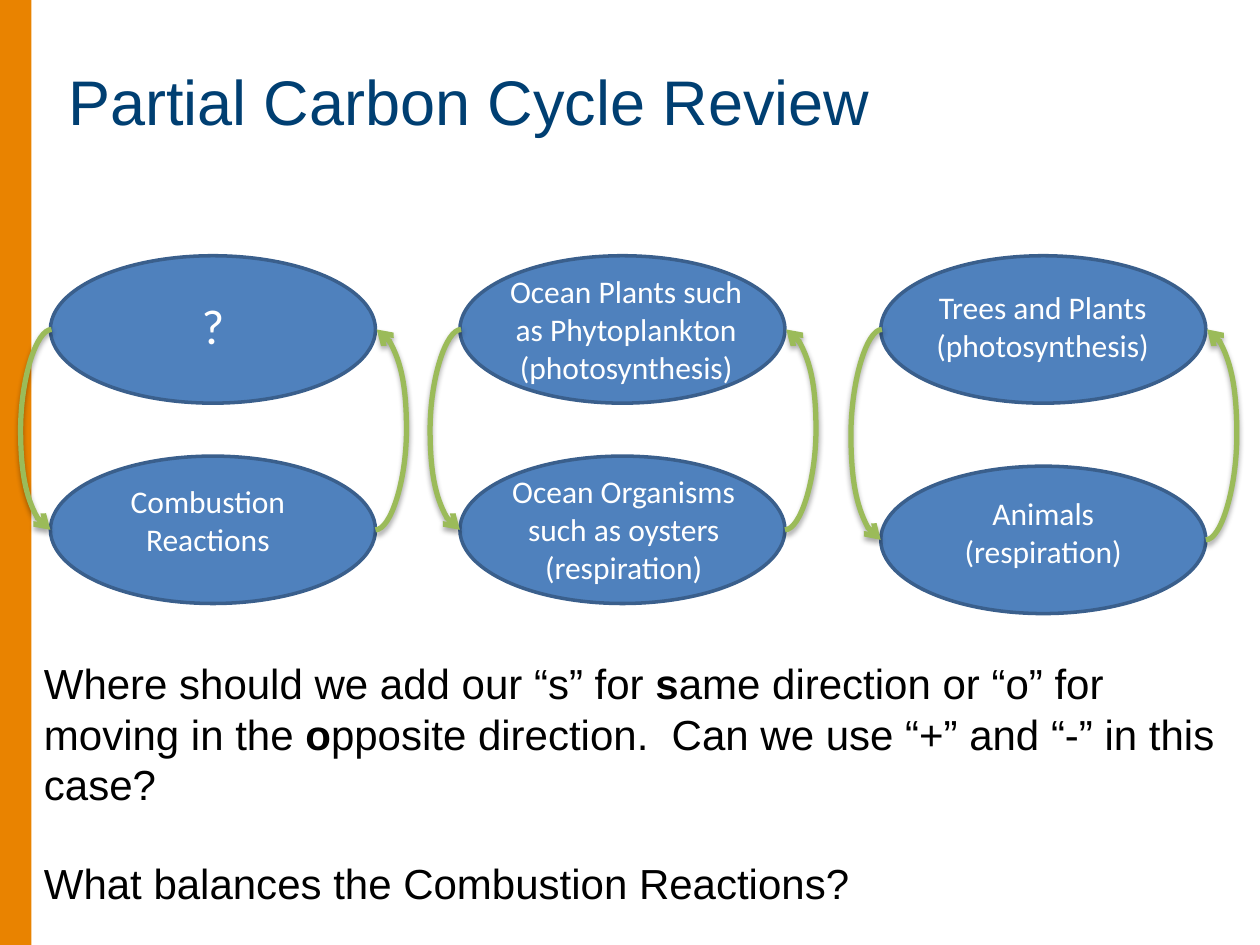
from lxml import etree
from pptx import Presentation
from pptx import util as u
from pptx.dml.color import RGBColor
from pptx.enum import shapes, text
from pptx.oxml import ns

ORANGE = RGBColor(0xE9, 0x83, 0x00)
NAVY = RGBColor(0x00, 0x3F, 0x72)
BLUE = RGBColor(0x4F, 0x81, 0xBD)
BLUE_EDGE = RGBColor(0x3A, 0x5F, 0x8C)
GREEN = RGBColor(0x9B, 0xBB, 0x59)
WHITE = RGBColor(0xFF, 0xFF, 0xFF)
BLACK = RGBColor(0x00, 0x00, 0x00)

OVAL_W, OVAL_H = 2.58, 1.17
TOP_Y = 2.03
BULGE, SHIFT = 0.25, 0.01

CYCLES = [
    (6.99, 3.70,
     (["Trees and Plants (photosynthesis)"], 7.22, 2.24, 2.11, 0.71, 18),
     (["Animals (respiration)"], 7.28, 3.87, 2, 0.71, 18)),
    (3.65, 3.62,
     (["Ocean Plants such as Phytoplankton", "(photosynthesis)"],
      3.85, 2.11, 2.24, 1.01, 18),
     (["Ocean Organisms such as oysters (respiration)"],
      3.81, 3.70, 2.28, 1.01, 18)),
    (0.40, 3.62,
     (["?"], 0.69, 2.30, 2, 0.57, 28),
     (["Combustion Reactions"], 0.65, 3.78, 2, 0.71, 18)),
]

QUESTIONS = [
    [("Where should we add our “s” for ", False), ("s", True),
     ("ame direction or “o” for moving in the ", False), ("o", True),
     ("pposite direction.  Can we use “+” and “-” in this case?", False)],
    [("What balances the Combustion Reactions?", False)],
]


class CycleSlide:
    def __init__(self, prs):
        self.s = prs.slides.add_slide(prs.slide_layouts[5])

    def style(self, font, color, **values):
        font.color.rgb = color
        for name, value in values.items():
            setattr(font, name, value)

    def place(self, sp, x, y, w, h):
        box = {"left": x, "top": y, "width": w, "height": h}
        for name, value in box.items():
            setattr(sp, name, u.Inches(value))

    def title(self, words, x, y, w, h):
        sp = self.s.shapes.title
        self.place(sp, x, y, w, h)
        tf = sp.text_frame
        tf.text = words
        tf.vertical_anchor = text.MSO_ANCHOR.MIDDLE
        p = tf.paragraphs[0]
        p.alignment = text.PP_ALIGN.LEFT
        self.style(p.runs[0].font, NAVY, name="Arial", size=u.Pt(36))

    def shape(self, parent, kind, x, y, w, h, fill, edge=None):
        sp = parent.shapes.add_shape(kind, *map(u.Inches, (x, y, w, h)))
        sp.shadow.inherit = False
        sp.fill.solid()
        sp.fill.fore_color.rgb = fill
        if edge is None:
            sp.line.fill.background()
        else:
            sp.line.color.rgb = edge
            sp.line.width = u.Pt(2)

    def textbox(self, parent, paragraphs, x, y, w, h, align, gap, color, **font):
        sp = parent.shapes.add_textbox(*map(u.Inches, (x, y, w, h)))
        tf = sp.text_frame
        tf.word_wrap = True
        for i, runs in enumerate(paragraphs):
            p = tf.add_paragraph() if i else tf.paragraphs[0]
            p.alignment = align
            if i:
                p.space_before = u.Pt(gap)
            for words, bold in runs:
                r = p.add_run()
                r.text = words
                self.style(r.font, color, bold=bold, **font)

    def label(self, parent, lines, x, y, w, h, size):
        self.textbox(parent, [[(line, False)] for line in lines], x, y, w, h,
                     text.PP_ALIGN.CENTER, 0, WHITE,
                     name="Calibri", size=u.Pt(size))

    def arrow(self, parent, x1, y1, x2, y2):
        c = parent.shapes.add_connector(
            shapes.MSO_CONNECTOR.CURVE, *map(u.Inches, (x1, y1, x2, y2)))
        c.line.color.rgb = GREEN
        c.line.width = u.Pt(3)
        spPr = c._element.spPr
        guides = spPr.find(ns.qn("a:prstGeom")).find(ns.qn("a:avLst"))
        ratio = round(BULGE / SHIFT * 100000)
        etree.SubElement(guides, ns.qn("a:gd"), name="adj1", fmla=f"val {ratio}")
        etree.SubElement(spPr.find(ns.qn("a:ln")), ns.qn("a:tailEnd"), type="arrow")
        effects = etree.SubElement(spPr, ns.qn("a:effectLst"))
        shadow = etree.SubElement(effects, ns.qn("a:outerShdw"), blurRad="40000",
                                  dist="23000", dir="5400000", rotWithShape="0")
        tint = etree.SubElement(shadow, ns.qn("a:srgbClr"), val=str(BLACK))
        etree.SubElement(tint, ns.qn("a:alpha"), val="35000")

    def cycle(self, x, low_y, top_label, low_label):
        group = self.s.shapes.add_group_shape()
        for y, label in ((TOP_Y, top_label), (low_y, low_label)):
            self.shape(group, shapes.MSO_SHAPE.OVAL, x, y, OVAL_W, OVAL_H,
                       BLUE, BLUE_EDGE)
            self.label(group, *label)
        top, low = TOP_Y + OVAL_H / 2, low_y + OVAL_H / 2
        right = x + OVAL_W
        self.arrow(group, x + SHIFT, top, x, low)
        self.arrow(group, right, low, right + SHIFT, top)


def main():
    prs = Presentation()
    prs.slide_width, prs.slide_height = u.Inches(10), u.Inches(7.5)
    slide = CycleSlide(prs)
    slide.shape(slide.s, shapes.MSO_SHAPE.RECTANGLE, 0, 0, 0.25, 7.5, ORANGE)
    slide.title("Partial Carbon Cycle Review", 0.44, 0.17, 9, 1.25)
    for cycle in CYCLES:
        slide.cycle(*cycle)
    slide.textbox(slide.s, QUESTIONS, 0.25, 5.17, 9.75, 2.12,
                  text.PP_ALIGN.LEFT, 28, BLACK, name="Arial", size=u.Pt(24))
    prs.save("out.pptx")


if __name__ == "__main__":
    main()
